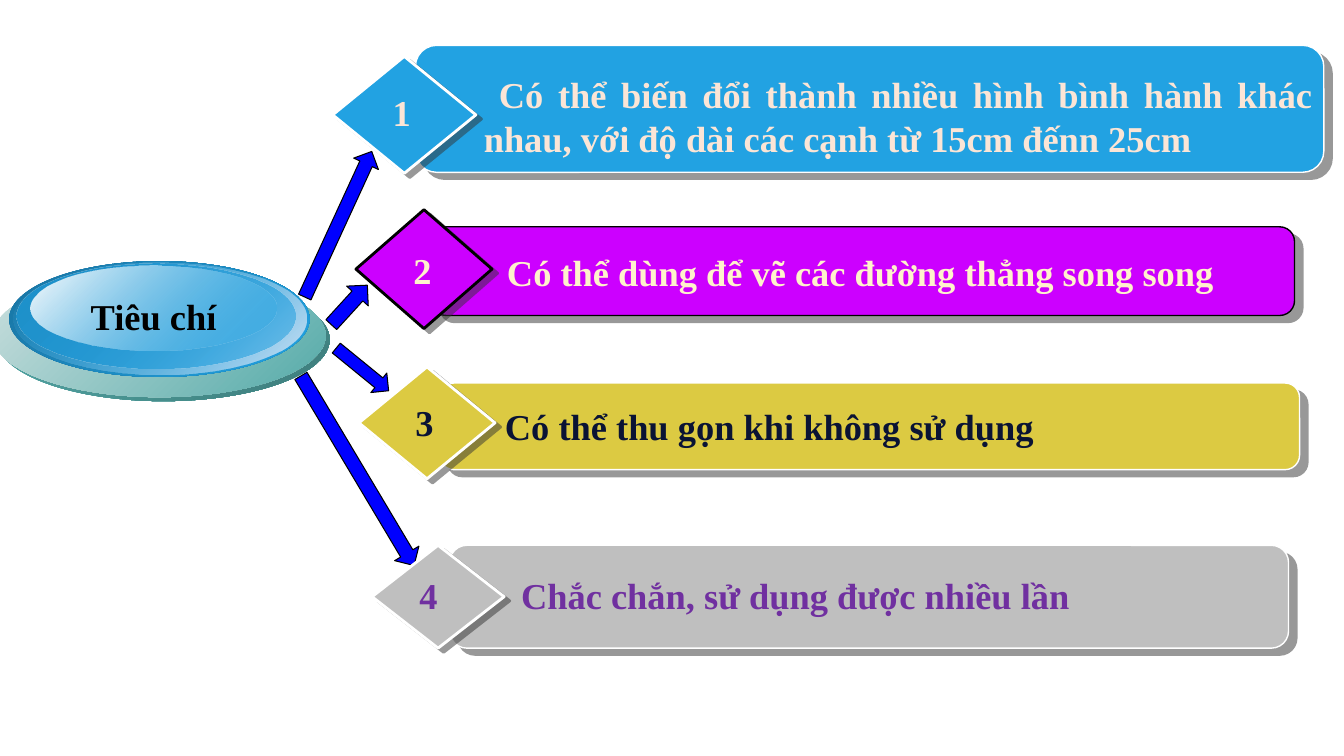
"""Build a slide that lists four numbered criteria fanning out from a central disc."""
from dataclasses import dataclass

from lxml import etree
from pptx import Presentation
from pptx.dml.color import RGBColor
from pptx.enum.shapes import MSO_SHAPE
from pptx.enum.text import PP_ALIGN
from pptx.oxml.ns import qn
from pptx.util import Pt

PX = 9144
ARROW, BAR = MSO_SHAPE.RIGHT_ARROW, MSO_SHAPE.ROUNDED_RECTANGLE
DIAMOND, OVAL = MSO_SHAPE.DIAMOND, MSO_SHAPE.OVAL
CENTER, JUSTIFY = PP_ALIGN.CENTER, PP_ALIGN.JUSTIFY


@dataclass(frozen=True)
class Theme:
    font: str = "Times New Roman"
    size: int = 26
    black: str = "000000"
    white: str = "FFFFFF"
    arrow: str = "0000FF"
    shadow: str = "333333"
    blue: str = "22A2E2"
    purple: str = "CC00FF"
    yellow: str = "DCCA42"
    gray: str = "BFBFBF"
    peach: str = "FBE5D6"
    cream: str = "FFF2CC"
    navy: str = "0A1334"
    violet: str = "7030A0"
    teal: str = "55ABA9"
    deep_teal: str = "3E7D7C"
    pale_teal: str = "CBDFDE"
    deep_blue: str = "1874A2"
    mid_blue: str = "1F92CC"
    pale_blue: str = "D4E4F5"


T = Theme()


def add_shape(shapes, kind, box, fill=None, line=None, width=0, shadow=None):
    sp = shapes.add_shape(kind, *(v * PX for v in box))
    sp.shadow.inherit = False
    if fill:
        sp.fill.solid()
        sp.fill.fore_color.rgb = RGBColor.from_string(fill)
    if line:
        sp.line.color.rgb = RGBColor.from_string(line)
        sp.line.width = Pt(width)
    else:
        sp.line.fill.background()
    if shadow:
        dist, angle = shadow
        effects = sp._element.spPr.find(qn("a:effectLst"))
        outer = etree.SubElement(effects, qn("a:outerShdw"), blurRad="0", dist=str(Pt(dist)),
                                 dir=str(angle * 60000), algn="ctr", rotWithShape="0")
        color = etree.SubElement(outer, qn("a:srgbClr"), val=T.shadow)
        etree.SubElement(color, qn("a:alpha"), val="50000")
    return sp


def add_text(shapes, box, text, color, align=CENTER, indent=0):
    tf = shapes.add_textbox(*(v * PX for v in box)).text_frame
    tf.word_wrap = align == JUSTIFY
    p = tf.paragraphs[0]
    p.alignment = align
    if indent:
        p._p.get_or_add_pPr().set("indent", str(indent * PX))
    r = p.add_run()
    r.text = text
    r.font.name, r.font.size, r.font.bold = T.font, Pt(T.size), True
    r.font.color.rgb = RGBColor.from_string(color)


prs = Presentation()
prs.slide_width, prs.slide_height = 1333 * PX, 750 * PX
s = prs.slides.add_slide(prs.slide_layouts[6])

arrows = [
    ((245, 453, 219, 28), 59.2),
    ((326, 354, 67, 25), 39.2),
    ((256, 209, 159, 27), 294.7),
    ((320, 288, 53, 29), 312.4),
]
for box, angle in arrows:
    add_shape(s.shapes, ARROW, box, T.arrow, T.black, 0.75).rotation = angle

criteria = [
    (T.blue, T.white, T.peach, (412, 45, 901, 126), (330, 56, 142, 116),
     (470, 67, 843, 98), (379, 84, 39, 54), 15,
     "Có thể biến đổi thành nhiều hình bình hành khác nhau, với độ dài các cạnh từ 15cm đếnn 25cm"),
    (T.purple, T.black, T.cream, (428, 225, 856, 88), (353, 208, 135, 118),
     (475, 243, 821, 54), (400, 241, 38, 54), 18,
     "Có thể dùng để vẽ các đường thẳng song song"),
    (T.yellow, T.white, T.navy, (436, 380, 853, 86), (356, 364, 135, 111),
     (473, 396, 799, 54), (402, 392, 38, 54), 18,
     "Có thể thu gọn khi không sử dụng"),
    (T.gray, T.white, T.violet, (446, 541, 832, 102), (369, 541, 131, 102),
     (507, 564, 761, 54), (406, 564, 38, 54), 0,
     "Chắc chắn, sử dụng được nhiều lần"),
]
for number, criterion in enumerate(criteria, 1):
    fill, line, color, bar, diamond, text_box, number_box, indent, text = criterion
    shapes = s.shapes.add_group_shape().shapes
    add_shape(shapes, BAR, bar, fill, line, 1, (7.8, 40))
    add_shape(shapes, DIAMOND, diamond, fill, line, 2, (5, 37))
    add_text(shapes, text_box, text, color, JUSTIFY, indent)
    add_text(shapes, number_box, str(number), color)

disc_layers = [
    ((-3, 276, 330, 122), (T.teal, 100), (T.deep_teal, 100)),
    ((-7, 272, 330, 122), (T.pale_teal, 100), (T.teal, 100)),
    ((9, 259, 298, 115), (T.deep_blue, 100), (T.blue, 100)),
    ((13, 260, 291, 112), (T.blue, 0), (T.pale_blue, 100)),
    ((16, 261, 277, 105), (T.mid_blue, 100), (T.blue, 48)),
    ((30, 263, 244, 85), (T.white, 100), (T.blue, 38)),
]
disc = s.shapes.add_group_shape().shapes
for box, *stops in disc_layers:
    sp = add_shape(disc, OVAL, box)
    sp.fill.gradient()
    sp.fill.gradient_angle = 315
    for stop, (color, _) in zip(sp.fill.gradient_stops, stops):
        stop.color.rgb = RGBColor.from_string(color)
    for clr, (_, opacity) in zip(sp._element.spPr.iter(qn("a:srgbClr")), stops):
        if opacity < 100:
            etree.SubElement(clr, qn("a:alpha"), val=str(opacity * 1000))
add_text(disc, (79, 287, 147, 54), "Tiêu chí", T.black)

prs.save("out.pptx")
